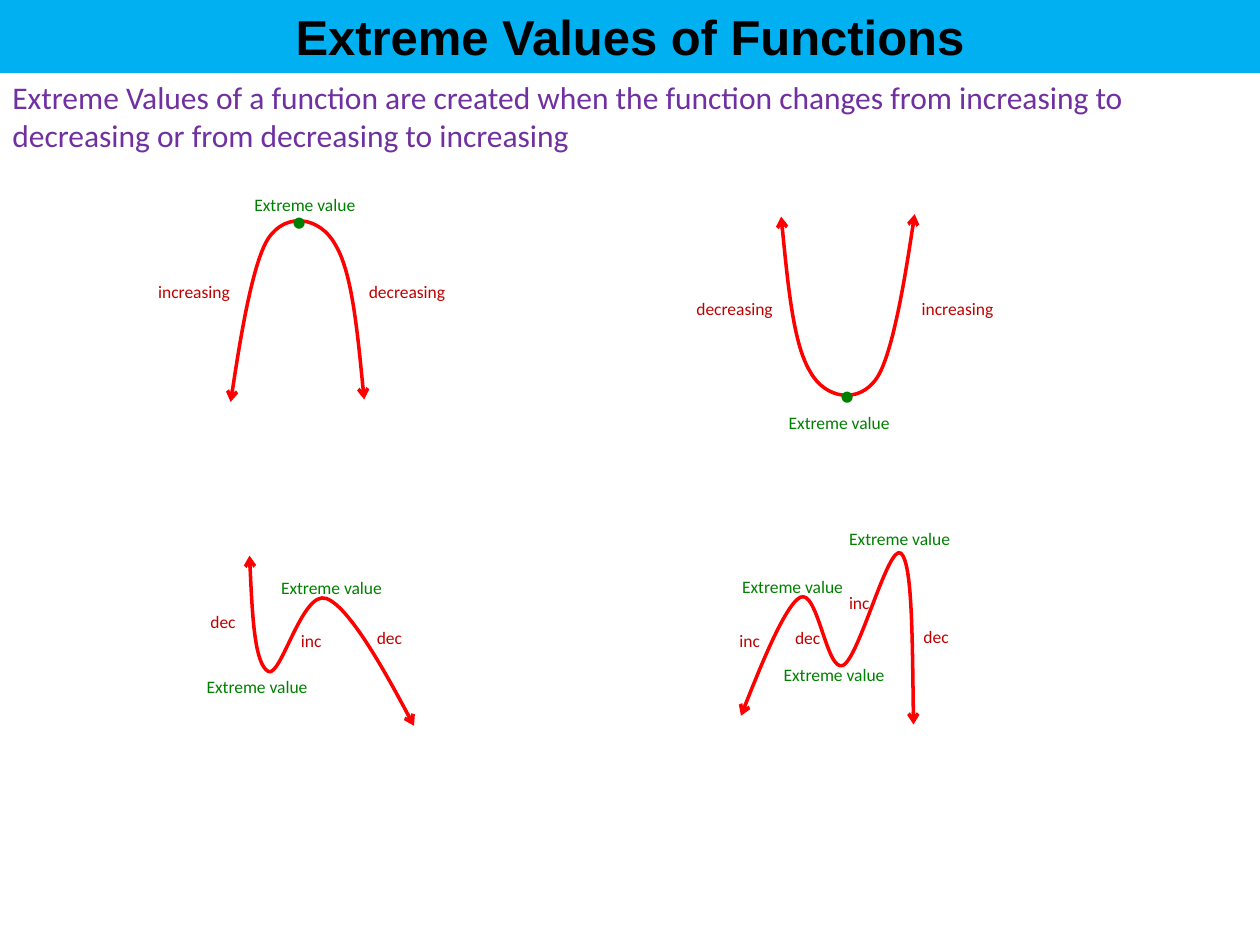
from dataclasses import dataclass

from lxml import etree
from pptx import Presentation
from pptx.dml.color import RGBColor
from pptx.enum import shapes, text
from pptx.oxml.ns import qn
from pptx.util import Pt


@dataclass(frozen=True)
class Theme:
    banner: str = "00B0F0"
    title: str = "000000"
    statement: str = "7030A0"
    curve: str = "FF0000"
    extreme: str = "008000"
    trend: str = "C00000"
    heading_font: str = "Arial"
    body_font: str = "Calibri"
    title_size: int = 28
    body_size: int = 18
    label_size: int = 10


class SlideBuilder:
    def __init__(self, slide, theme):
        self.s = slide
        self.theme = theme

    def add_words(self, sp, words, size, color, font, align, bold=False):
        tf = sp.text_frame
        tf.word_wrap = True
        p = tf.paragraphs[0]
        p.alignment = align
        r = p.add_run()
        r.text = words
        r.font.size = Pt(size)
        r.font.name = font
        r.font.bold = bold
        r.font.color.rgb = RGBColor.from_string(color)
        return tf

    def banner(self, words, width, height):
        t = self.theme
        sp = self.s.shapes.add_shape(
            shapes.MSO_SHAPE.RECTANGLE, 0, 0, Pt(width), Pt(height))
        sp.shadow.inherit = False
        sp.fill.solid()
        sp.fill.fore_color.rgb = RGBColor.from_string(t.banner)
        sp.line.color.rgb = RGBColor.from_string(t.banner)
        sp.line.width = Pt(0.75)
        tf = self.add_words(sp, words, t.title_size, t.title, t.heading_font,
                            text.PP_ALIGN.CENTER, bold=True)
        tf.vertical_anchor = text.MSO_ANCHOR.MIDDLE

    def statement(self, words, left, top, width, height):
        t = self.theme
        sp = self.s.shapes.add_textbox(Pt(left), Pt(top), Pt(width), Pt(height))
        self.add_words(sp, words, t.body_size, t.statement, t.body_font,
                       text.PP_ALIGN.LEFT)

    def label(self, words, left, top, width, height, size, color):
        sp = self.s.shapes.add_textbox(Pt(left), Pt(top), Pt(width), Pt(height))
        tf = self.add_words(sp, words, size, color, self.theme.body_font,
                            text.PP_ALIGN.CENTER)
        tf.word_wrap = False

    def curve(self, left, top, width, height, points, rotation=0):
        """Draw a Bezier curve: a start point, then three points per segment."""
        fb = self.s.shapes.build_freeform(Pt(left), Pt(top))
        fb.add_line_segments([(Pt(left + width), Pt(top + height))], close=False)
        sp = fb.convert_to_shape()
        sp.rotation = rotation
        sp.shadow.inherit = False
        sp.fill.background()
        sp.line.color.rgb = RGBColor.from_string(self.theme.curve)
        sp.line.width = Pt(2)

        # Replace the box diagonal with the curve, in box coordinates
        outline = sp.element.find(".//" + qn("a:path"))
        for child in list(outline):
            outline.remove(child)
        for i, (x, y) in enumerate(points):
            if i == 0:
                step = etree.SubElement(outline, qn("a:moveTo"))
            elif i % 3 == 1:
                step = etree.SubElement(outline, qn("a:cubicBezTo"))
            etree.SubElement(step, qn("a:pt"), x=str(Pt(x)), y=str(Pt(y)))

        # Arrowheads on both ends
        ln = sp.element.spPr.find(qn("a:ln"))
        for end in ("a:headEnd", "a:tailEnd"):
            etree.SubElement(ln, qn(end), type="arrow")


# Curves, relative to the corner of their box
VALLEY = [(0, 1.4), (3.6, 38.2), (7.2, 74.9), (16.6, 90),
          (25.2, 105.8), (44.6, 108.7), (54.7, 93.6),
          (64.8, 78.5), (76.3, 0), (76.3, 0)]
THREE_TURNS = [(0, 0), (0.7, 46.1), (0.7, 92.2), (7.2, 97.9),
               (14.4, 103.7), (31, 38.2), (40.3, 33.8),
               (49.7, 29.5), (54.7, 77.8), (64.8, 72.7),
               (74.2, 67.7), (98.6, 5), (98.6, 5)]
TWO_TURNS = [(0, 0), (1.4, 31), (2.9, 62), (10.8, 66.2),
             (18, 69.8), (30.2, 19.4), (43.9, 24.5),
             (58.3, 29.5), (94, 97.2), (94, 97.2)]

# Label positions by wording
EXTREMES = [(134.6, 107.3), (439.9, 231.8), (149.8, 326.2), (107.3, 383),
            (413.3, 325.4), (437, 375.8), (474.5, 298.1)]
DOTS = [(159.1, 111.6), (472.3, 211)]
TRENDS = {
    "increasing": (61.9, [(79.9, 157), (516.2, 167)]),
    "decreasing": (61.9, [(201.6, 157), (388.8, 167)]),
    "inc": (30.2, [(162.7, 356.4), (413.3, 356.4), (475.9, 334.8)]),
    "dec": (30.2, [(207.4, 355), (112.3, 345.6), (446.4, 355), (519.8, 354.2)]),
}


def main():
    prs = Presentation()
    prs.slide_width, prs.slide_height = Pt(720), Pt(540)
    theme = Theme()
    b = SlideBuilder(prs.slides.add_slide(prs.slide_layouts[6]), theme)

    # Title and statement
    b.banner("Extreme Values of Functions", 720, 41.2)
    b.statement("Extreme Values of a function are created when the function "
                "changes from increasing to decreasing or from decreasing to "
                "increasing", 0, 41.2, 720, 50.9)

    # Four curves; the hill is the valley turned over
    b.curve(446.4, 122.4, 76.3, 103, VALLEY)
    b.curve(131.8, 126.7, 76.3, 103, VALLEY, rotation=180)
    b.curve(423.4, 316.1, 98.6, 97.9, THREE_TURNS, rotation=180)
    b.curve(142.6, 317.5, 94, 97.2, TWO_TURNS)

    # Extreme values
    for left, top in EXTREMES:
        b.label("Extreme value", left, top, 79.2, 19.4,
                theme.label_size, theme.extreme)
    for left, top in DOTS:
        b.label("•", left, top, 23.8, 28.8, theme.body_size, theme.extreme)

    # Rising and falling stretches
    for words, (width, places) in TRENDS.items():
        for left, top in places:
            b.label(words, left, top, width, 19.4,
                    theme.label_size, theme.trend)

    prs.save("out.pptx")


if __name__ == "__main__":
    main()
